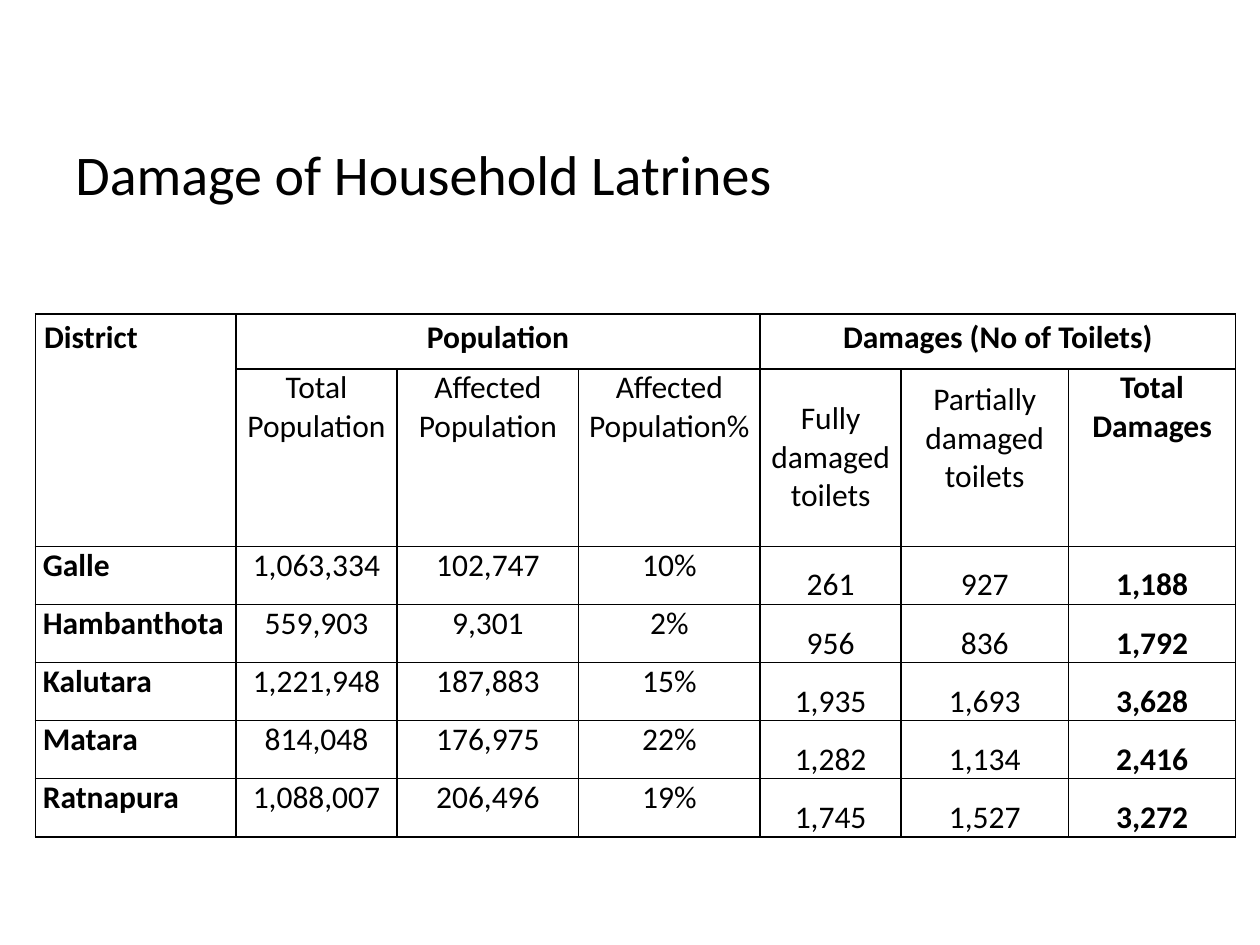
from pptx import Presentation
from pptx.dml.color import RGBColor
from pptx.enum.text import MSO_ANCHOR, PP_ALIGN
from pptx.oxml.ns import qn
from pptx.util import Pt
from lxml.etree import SubElement

TITLE = "Damage of Household Latrines"
ROWS = [
    ["District", "Population", "", "", "Damages (No of Toilets)", "", ""],
    ["", "Total Population", "Affected Population", "Affected Population%",
     "Fully damaged toilets", "Partially damaged toilets", "Total Damages"],
    ["Galle", "1,063,334", "102,747", "10%", "261", "927", "1,188"],
    ["Hambanthota", "559,903", "9,301", "2%", "956", "836", "1,792"],
    ["Kalutara", "1,221,948", "187,883", "15%", "1,935", "1,693", "3,628"],
    ["Matara", "814,048", "176,975", "22%", "1,282", "1,134", "2,416"],
    ["Ratnapura", "1,088,007", "206,496", "19%", "1,745", "1,527", "3,272"],
]
SPANS = [((0, 0), (1, 0)), ((0, 1), (0, 3)), ((0, 4), (0, 6))]
WIDTHS = [114.6, 92.2, 103.7, 103.7, 80.6, 95.6, 95.6]
HEIGHTS = [31.5, 101.4] + [33.2] * 5
INK, PAPER = "000000", "FFFFFF"
LAST = len(WIDTHS) - 1


def color(code):
    return RGBColor.from_string(code)


def style(par, size, bold=False):
    for run in par.runs:
        font = run.font
        font.name, font.size, font.bold = "Calibri", Pt(size), bold
        font.color.rgb = color(INK)


def border(cell):
    props = cell._tc.get_or_add_tcPr()
    for i, side in enumerate(("lnL", "lnR", "lnT", "lnB")):
        line = SubElement(props, qn("a:" + side), w=str(Pt(1)))
        fill = SubElement(line, qn("a:solidFill"))
        SubElement(fill, qn("a:srgbClr"), val=INK)
        props.remove(line)
        props.insert(i, line)


def anchor(r, c):
    if r == 0 or c < 4:
        return MSO_ANCHOR.TOP
    if r > 1:
        return MSO_ANCHOR.BOTTOM
    return MSO_ANCHOR.TOP if c == LAST else MSO_ANCHOR.MIDDLE


def fill_cell(cell, r, c, text):
    cell.fill.solid()
    cell.fill.fore_color.rgb = color(PAPER)
    border(cell)
    side, edge = (5, 3) if r == 0 else (4.3, 0)
    cell.margin_left = cell.margin_right = Pt(side)
    cell.margin_top = cell.margin_bottom = Pt(edge)
    if (r, c) == (1, 5):
        cell.margin_bottom = Pt(22)
    cell.vertical_anchor = anchor(r, c)
    if text:
        cell.text_frame.text = text
        par = cell.text_frame.paragraphs[0]
        par.alignment = PP_ALIGN.CENTER if c else PP_ALIGN.JUSTIFY
        style(par, 18, r == 0 or c in (0, LAST))


def main():
    deck = Presentation()
    deck.slide_width, deck.slide_height = Pt(720), Pt(540)
    slide = deck.slides.add_slide(deck.slide_layouts[6])

    box = slide.shapes.add_textbox(Pt(36), Pt(76), Pt(648), Pt(443.5))
    box.text_frame.word_wrap = True
    box.text_frame.text = TITLE
    style(box.text_frame.paragraphs[0], 32)

    frame = slide.shapes.add_table(
        len(ROWS), len(WIDTHS), Pt(20.2), Pt(179.3),
        Pt(sum(WIDTHS)), Pt(sum(HEIGHTS)))
    table = frame.table
    table.first_row = table.horz_banding = False
    for col, width in zip(table.columns, WIDTHS):
        col.width = Pt(width)
    for row, height in zip(table.rows, HEIGHTS):
        row.height = Pt(height)
    for start, end in SPANS:
        table.cell(*start).merge(table.cell(*end))
    for r, row in enumerate(ROWS):
        for c, text in enumerate(row):
            fill_cell(table.cell(r, c), r, c, text)

    deck.save("out.pptx")


if __name__ == "__main__":
    main()
